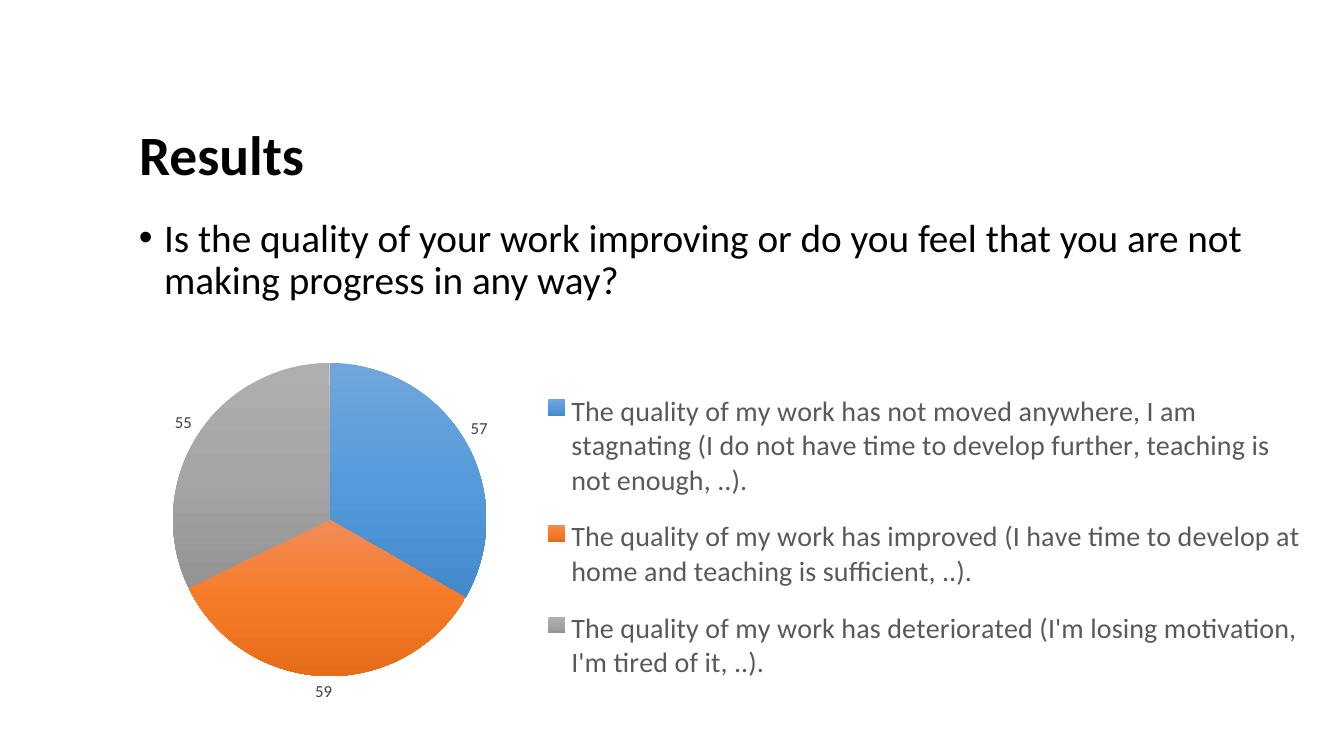
from lxml import etree
from pptx import Presentation
from pptx import util as u
from pptx.chart.data import CategoryChartData
from pptx.dml.color import RGBColor
from pptx.enum import chart as ch, text
from pptx.oxml import parse_xml
from pptx.oxml.ns import nsdecls, qn

FONT = "Calibri"
BLACK = RGBColor(0x00, 0x00, 0x00)
LEGEND_GREY = RGBColor(0x59, 0x59, 0x59)
LABEL_GREY = RGBColor(0x40, 0x40, 0x40)

# Top, middle and bottom colour of each slice
BLUES = [RGBColor(0x71, 0xA6, 0xDB), RGBColor(0x55, 0x9B, 0xDB), RGBColor(0x44, 0x8A, 0xCA)]
ORANGES = [RGBColor(0xF1, 0x8C, 0x57), RGBColor(0xF6, 0x7B, 0x28), RGBColor(0xE5, 0x6C, 0x19)]
GREYS = [RGBColor(0xAF, 0xAF, 0xAF), RGBColor(0xA5, 0xA5, 0xA5), RGBColor(0x93, 0x93, 0x93)]

WIDTH, HEIGHT = u.Inches(13.33), u.Inches(7.5)
LEFT = 9.6  # common left edge, in percent of the slide's width

QUESTION = ("Is the quality of your work improving or do you feel that you are "
            "not making progress in any way?")
ANSWERS = [
    ("The quality of my work has not moved anywhere, I am stagnating (I do not "
     "have time to develop further, teaching is not enough, ..).", 57, BLUES),
    ("The quality of my work has improved (I have time to develop at home and "
     "teaching is sufficient, ..).", 59, ORANGES),
    ("The quality of my work has deteriorated (I'm losing motivation, I'm tired "
     "of it, ..).", 55, GREYS),
]


def area(left, top, width, height):
    """Turn percentages of the slide into lengths."""
    return (int(WIDTH * left / 100), int(HEIGHT * top / 100),
            int(WIDTH * width / 100), int(HEIGHT * height / 100))


def set_font(font, size, color, bold=False):
    font.name, font.size, font.bold = FONT, u.Pt(size), bold
    font.color.rgb = color


def add_title(s, words, box):
    sp = s.shapes.title
    sp.left, sp.top, sp.width, sp.height = box
    tf = sp.text_frame
    tf.text = words
    tf.auto_size = text.MSO_AUTO_SIZE.NONE
    tf.vertical_anchor = text.MSO_ANCHOR.MIDDLE
    p = tf.paragraphs[0]
    p.alignment = text.PP_ALIGN.LEFT
    p.line_spacing = 0.9
    set_font(p.runs[0].font, 39.6, BLACK, bold=True)


def add_bullet(s, words, box):
    tf = s.shapes.add_textbox(*box).text_frame
    tf.word_wrap = True
    tf.text = words
    p = tf.paragraphs[0]
    p.line_spacing = 0.9
    pPr = p._p.get_or_add_pPr()
    pPr.set("marL", str(u.Inches(0.25)))
    pPr.set("indent", str(-u.Inches(0.25)))
    etree.SubElement(pPr, qn("a:buFont")).set("typeface", "Arial")
    etree.SubElement(pPr, qn("a:buChar")).set("char", "•")
    set_font(p.runs[0].font, 28, BLACK)


def fill_gradient(point, colors):
    """Fill a slice from top to bottom with evenly spaced colours."""
    step = 100000 // (len(colors) - 1)
    stops = "".join(f'<a:gs pos="{i * step}"><a:srgbClr val="{color}"/></a:gs>'
                    for i, color in enumerate(colors))
    point.format.line.fill.background()
    point.format.fill.background()
    spPr = point.format.fill._xPr
    spPr.replace(spPr.find(qn("a:noFill")), parse_xml(
        f'<a:gradFill {nsdecls("a")} rotWithShape="1"><a:gsLst>{stops}</a:gsLst>'
        '<a:lin ang="5400000" scaled="0"/></a:gradFill>'))


def manual_layout(x, y, w, h, inner=False):
    """Place a chart part by shares of the chart's size."""
    target = '<c:layoutTarget val="inner"/>' if inner else ""
    sizes = "".join(f'<c:{key} val="{value}"/>'
                    for key, value in zip("xywh", (x, y, w, h)))
    return parse_xml(
        f'<c:layout {nsdecls("c")}><c:manualLayout>{target}<c:xMode val="edge"/>'
        f'<c:yMode val="edge"/>{sizes}</c:manualLayout></c:layout>')


def add_pie(s, answers, box):
    data = CategoryChartData()
    data.categories = [answer for answer, _, _ in answers]
    data.add_series("Series 1", [count for _, count, _ in answers])
    chart = s.shapes.add_chart(ch.XL_CHART_TYPE.PIE, *box, data).chart
    chart.has_title = False
    set_font(chart.font, 10, BLACK)

    # Slices and their values
    plot = chart.plots[0]
    plot.vary_by_categories = True
    for i, (_, _, colors) in enumerate(answers):
        fill_gradient(plot.series[0].points[i], colors)
    plot.has_data_labels = True
    labels = plot.data_labels
    labels.show_value = True
    labels.show_percentage = False
    labels.position = ch.XL_LABEL_POSITION.OUTSIDE_END
    set_font(labels.font, 12, LABEL_GREY)

    # Legend
    chart.has_legend = True
    legend = chart.legend
    legend.position = ch.XL_LEGEND_POSITION.RIGHT
    legend.include_in_layout = False
    set_font(legend.font, 20, LEGEND_GREY)

    # Places of the pie and the legend
    plot_area = chart._chartSpace.chart.plotArea
    for old in plot_area.findall(qn("c:layout")):
        plot_area.remove(old)
    plot_area.insert(0, manual_layout(0.037, 0.077, 0.264, 0.797, inner=True))
    for old in legend._element.findall(qn("c:layout")):
        legend._element.remove(old)
    legend._element.find(qn("c:legendPos")).addnext(
        manual_layout(0.35, 0.1, 0.64, 0.84))


def main():
    prs = Presentation()
    prs.slide_width, prs.slide_height = WIDTH, HEIGHT
    s = prs.slides.add_slide(prs.slide_layouts[5])
    add_title(s, "Results", area(LEFT, 16, 86.25, 9.75))
    add_bullet(s, QUESTION, area(LEFT, 28.25, 89.2, 15))
    add_pie(s, ANSWERS, area(LEFT, 44, 88.35, 52))
    prs.save("out.pptx")


if __name__ == "__main__":
    main()
